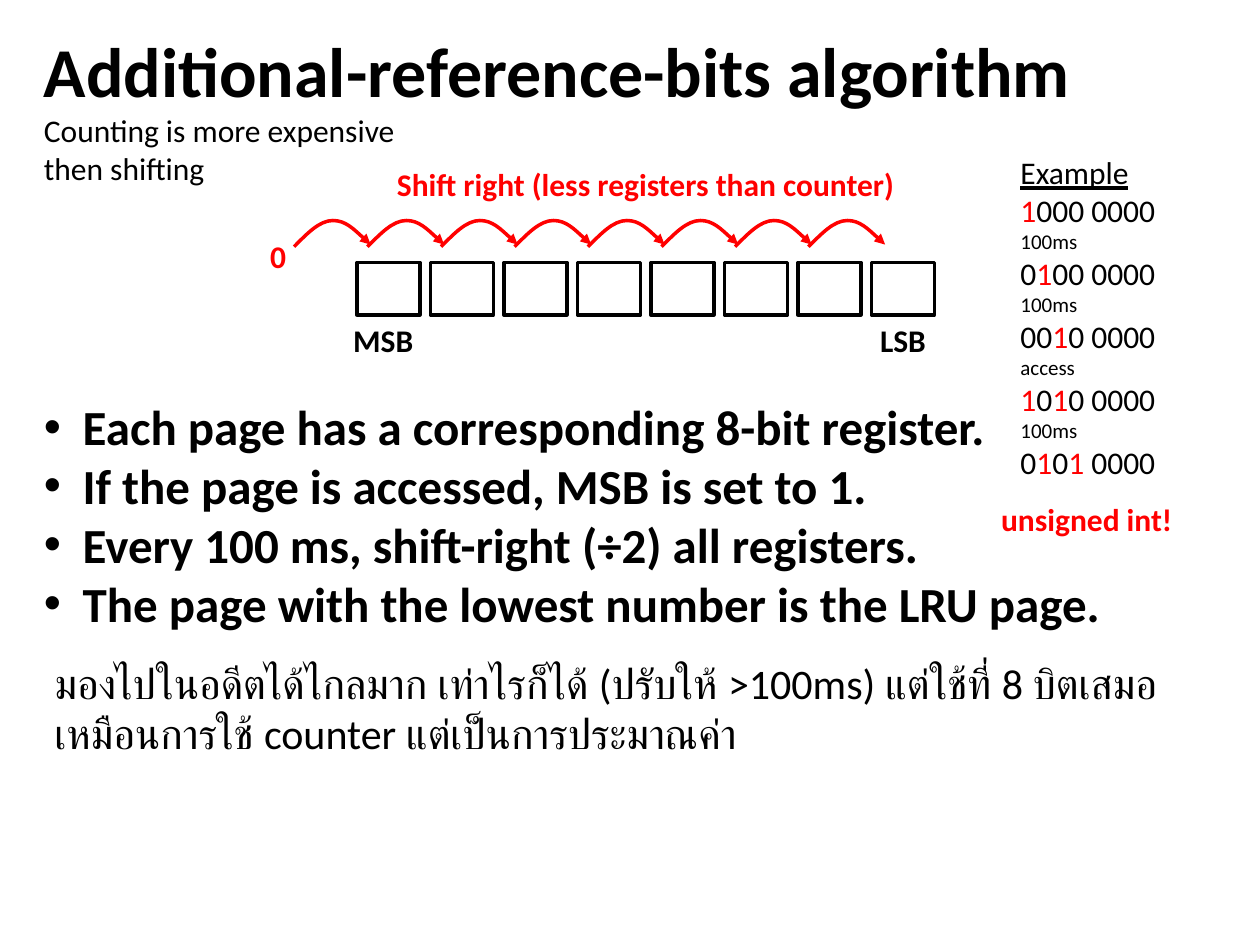
"""Build the slide on the additional-reference-bits algorithm."""
from itertools import groupby

from lxml import etree
from pptx import Presentation
from pptx.dml.color import RGBColor
from pptx.enum.shapes import MSO_SHAPE
from pptx.enum.text import MSO_AUTO_SIZE, PP_ALIGN
from pptx.oxml.ns import qn
from pptx.util import Pt

PX = 7620
LEFT, CENTER = PP_ALIGN.LEFT, PP_ALIGN.CENTER
RECTANGLE = MSO_SHAPE.RECTANGLE
GROW = MSO_AUTO_SIZE.SHAPE_TO_FIT_TEXT
COLORS = {"black": "000000", "red": "FF0000"}
PITCH = 70


def write(paragraph, text, size=18, color="black", bold=False, underline=False):
    run = paragraph.add_run()
    run.text = text
    run.font.name = "Calibri"
    run.font.size = Pt(size)
    run.font.bold = bold
    run.font.underline = underline
    run.font.color.rgb = RGBColor.from_string(COLORS[color])


def add_paragraphs(left, top, width, height, count=1, align=LEFT):
    box = slide.shapes.add_textbox(left * PX, top * PX, width * PX, height * PX)
    frame = box.text_frame
    frame.word_wrap = True
    frame.auto_size = GROW
    for _ in range(count - 1):
        frame.add_paragraph()
    for paragraph in frame.paragraphs:
        paragraph.alignment = align
    return frame.paragraphs


prs = Presentation()
prs.slide_width, prs.slide_height = 1200 * PX, 900 * PX
slide = prs.slides.add_slide(prs.slide_layouts[6])

title, = add_paragraphs(30, 20, 1140, 92)
write(title, "Additional-reference-bits algorithm", size=40, bold=True)

for bit in range(8):
    cell = slide.shapes.add_shape(
        RECTANGLE, (340 + bit * PITCH) * PX, 250 * PX, 60 * PX, 50 * PX)
    cell.shadow.inherit = False
    cell.fill.background()
    cell.line.color.rgb = RGBColor.from_string(COLORS["black"])
    cell.line.width = Pt(2)

arc_points = [(12, 223), (24, 210), (37, 210), (49, 210), (61, 222), (73, 233)]
for shift in range(8):
    start = 280 + shift * PITCH
    builder = slide.shapes.build_freeform(start, 235, scale=PX)
    builder.add_line_segments([(start + x, y) for x, y in arc_points], close=False)
    arc = builder.convert_to_shape()
    arc.shadow.inherit = False
    arc.fill.background()
    arc.line.color.rgb = RGBColor.from_string(COLORS["red"])
    arc.line.width = Pt(2)
    etree.SubElement(arc.line._get_or_add_ln(), qn("a:tailEnd"), type="triangle")
    outline = next(arc._element.iter(qn("a:path")))
    segments = outline.findall(qn("a:lnTo"))
    for first in (0, 3):
        curve = etree.SubElement(outline, qn("a:cubicBezTo"))
        for segment in segments[first:first + 3]:
            curve.append(segment[0])
            outline.remove(segment)

labels = [
    ("MSB", 320, 300, 90, "black"),
    ("LSB", 820, 300, 80, "black"),
    ("0", 240, 220, 50, "red"),
    ("Shift right (less registers than counter)", 320, 151, 590, "red"),
    ("unsigned int!", 930, 470, 210, "red"),
]
for label, left, top, width, color in labels:
    paragraph, = add_paragraphs(left, top, width, 48, align=CENTER)
    write(paragraph, label, color=color, bold=True)

rules = [
    "Each page has a corresponding 8-bit register.",
    "If the page is accessed, MSB is set to 1.",
    "Every 100 ms, shift-right (÷2) all registers.",
    "The page with the lowest number is the LRU page.",
]
for paragraph, rule in zip(add_paragraphs(30, 372, 1140, 239, len(rules)), rules):
    write(paragraph, rule, size=28, bold=True)
    properties = paragraph._p.get_or_add_pPr()
    properties.set("marL", str(37 * PX))
    properties.set("indent", str(-37 * PX))
    etree.SubElement(properties, qn("a:buFont"), typeface="Arial")
    etree.SubElement(properties, qn("a:buChar"), char="•")

remarks = [
    "มองไปในอดีตได้ไกลมาก เท่าไรก็ได้ (ปรับให้ >100ms) แต่ใช้ที่ 8 บิตเสมอ",
    "เหมือนการใช้ counter แต่เป็นการประมาณค่า",
]
for paragraph, remark in zip(add_paragraphs(40, 620, 1100, 109, len(remarks)), remarks):
    write(paragraph, remark, size=24)

registers = ["1000 0000", "0100 0000", "0010 0000", "1010 0000", "0101 0000"]
events = ["100ms", "100ms", "access", "100ms"]
example = add_paragraphs(960, 140, 210, 328, 1 + len(registers) + len(events))
write(example[0], "Example", underline=True)
for paragraph, register in zip(example[1::2], registers):
    for is_set, bits in groupby(register, lambda bit: bit == "1"):
        write(paragraph, "".join(bits), color="red" if is_set else "black")
for paragraph, event in zip(example[2::2], events):
    write(paragraph, event, size=12)

cost, = add_paragraphs(30, 100, 380, 85)
write(cost, "Counting is more expensive then shifting")

prs.save("out.pptx")
